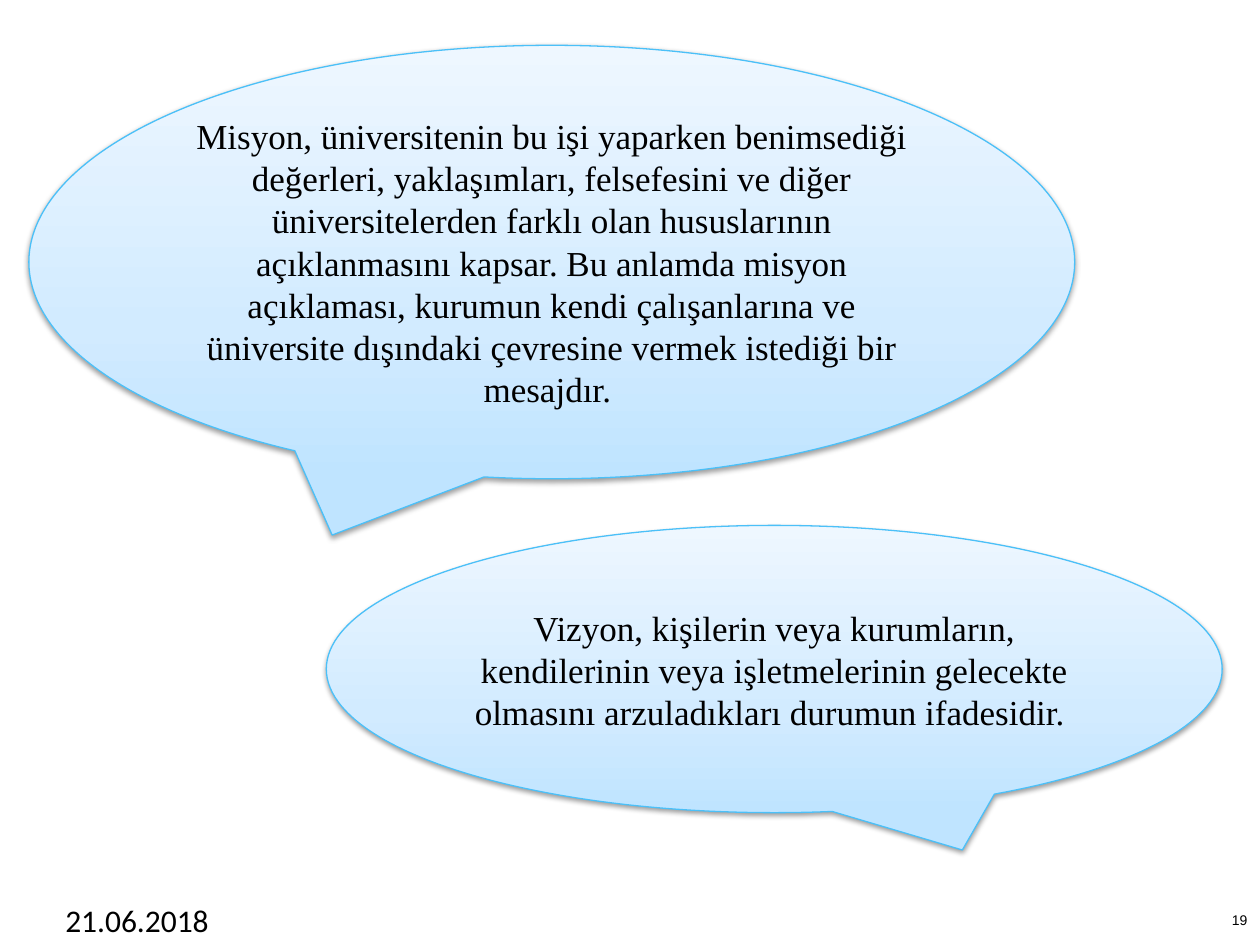
from copy import deepcopy
from dataclasses import dataclass

from lxml import etree
from pptx import Presentation
from pptx.dml.color import RGBColor
from pptx.enum.shapes import MSO_SHAPE
from pptx.enum.text import MSO_ANCHOR, PP_ALIGN
from pptx.oxml.ns import qn
from pptx.util import Inches, Pt

CALLOUT = MSO_SHAPE.OVAL_CALLOUT
TOP, MIDDLE = MSO_ANCHOR.TOP, MSO_ANCHOR.MIDDLE
LEFT, CENTER, RIGHT = PP_ALIGN.LEFT, PP_ALIGN.CENTER, PP_ALIGN.RIGHT
BLANK_LAYOUT = 6


@dataclass(frozen=True)
class Theme:
    text: str = "000000"
    outline: str = "4BC0F8"
    shadow: str = "000000"
    gradient: tuple = ((0, "BFE4FF"), (0.35, "D2EBFF"), (1, "EEF7FF"))
    body_font: str = "Times New Roman"
    body_size: int = 20
    date_font: str = "Calibri"
    date_size: int = 18
    number_font: str = "Arial"
    number_size: int = 8


@dataclass(frozen=True)
class Bubble:
    left: float
    top: float
    width: float
    height: float
    tip_x: float  # tip offset from the centre, as a share of the width
    text: str


@dataclass(frozen=True)
class FooterItem:
    left: float
    text: str
    font: str
    size: int
    align: PP_ALIGN
    anchor: MSO_ANCHOR
    inset: bool


THEME = Theme()
TIP_X, TIP_Y = 0.21, 0.63
FOOTER_TOP, FOOTER_WIDTH, FOOTER_HEIGHT = 7.1, 2.33, 0.4

BUBBLES = (
    Bubble(0.23, 0.36, 8.3, 3.44, -TIP_X,
           "Misyon, üniversitenin bu işi yaparken benimsediği değerleri, "
           "yaklaşımları, felsefesini ve diğer üniversitelerden farklı olan "
           "hususlarının açıklanmasını kapsar. Bu anlamda misyon açıklaması, "
           "kurumun kendi çalışanlarına ve üniversite dışındaki çevresine "
           "vermek istediği bir mesajdır. "),
    Bubble(2.59, 4.17, 7.11, 2.28, TIP_X,
           "Vizyon, kişilerin veya kurumların, kendilerinin veya "
           "işletmelerinin gelecekte olmasını arzuladıkları durumun "
           "ifadesidir. "),
)
FOOTER = (
    FooterItem(0.42, "21.06.2018", THEME.date_font, THEME.date_size, LEFT, TOP, True),
    FooterItem(7.57, "19", THEME.number_font, THEME.number_size, RIGHT, MIDDLE, False),
)


def write_text(shape, text: str, font: str, size: int,
               align: PP_ALIGN, anchor: MSO_ANCHOR) -> None:
    frame = shape.text_frame
    frame.word_wrap = True
    frame.vertical_anchor = anchor
    para = frame.paragraphs[0]
    para.text = text
    para.alignment = align
    para.font.name = font
    para.font.size = Pt(size)
    para.font.color.rgb = RGBColor.from_string(THEME.text)


def fill_gradient(shape) -> None:
    fill = shape.fill
    fill.gradient()
    fill.gradient_angle = 90
    stop_list = next(shape._element.spPr.iter(qn("a:gsLst")))
    stop_list.append(deepcopy(stop_list[-1]))  # a third colour stop
    for stop, (position, color) in zip(fill.gradient_stops, THEME.gradient):
        stop.position = position
        stop.color.rgb = RGBColor.from_string(color)


def add_soft_shadow(shape) -> None:
    shape.shadow.inherit = False
    effects = shape._element.spPr.find(qn("a:effectLst"))
    shadow = etree.SubElement(
        effects, qn("a:outerShdw"), blurRad=str(Pt(3.1)), dist=str(Pt(1.6)),
        dir="5400000", rotWithShape="0")
    color = etree.SubElement(shadow, qn("a:srgbClr"), val=THEME.shadow)
    etree.SubElement(color, qn("a:alpha"), val="38000")


def draw_bubble(page, bubble: Bubble) -> None:
    shape = page.shapes.add_shape(
        CALLOUT, Inches(bubble.left), Inches(bubble.top),
        Inches(bubble.width), Inches(bubble.height))
    shape.adjustments[0] = bubble.tip_x
    shape.adjustments[1] = TIP_Y
    fill_gradient(shape)
    shape.line.color.rgb = RGBColor.from_string(THEME.outline)
    shape.line.width = Pt(0.75)
    add_soft_shadow(shape)
    write_text(shape, bubble.text, THEME.body_font, THEME.body_size, CENTER, MIDDLE)


def draw_footer_item(page, item: FooterItem) -> None:
    box = page.shapes.add_textbox(
        Inches(item.left), Inches(FOOTER_TOP),
        Inches(FOOTER_WIDTH), Inches(FOOTER_HEIGHT))
    write_text(box, item.text, item.font, item.size, item.align, item.anchor)
    if not item.inset:
        frame = box.text_frame
        frame.margin_left = frame.margin_right = 0
        frame.margin_top = frame.margin_bottom = 0


def main() -> None:
    deck = Presentation()
    deck.slide_width, deck.slide_height = Inches(10), Inches(7.5)
    page = deck.slides.add_slide(deck.slide_layouts[BLANK_LAYOUT])

    # Date and page number
    for item in FOOTER:
        draw_footer_item(page, item)

    # Mission and vision speech bubbles
    for bubble in BUBBLES:
        draw_bubble(page, bubble)

    deck.save("out.pptx")


if __name__ == "__main__":
    main()
